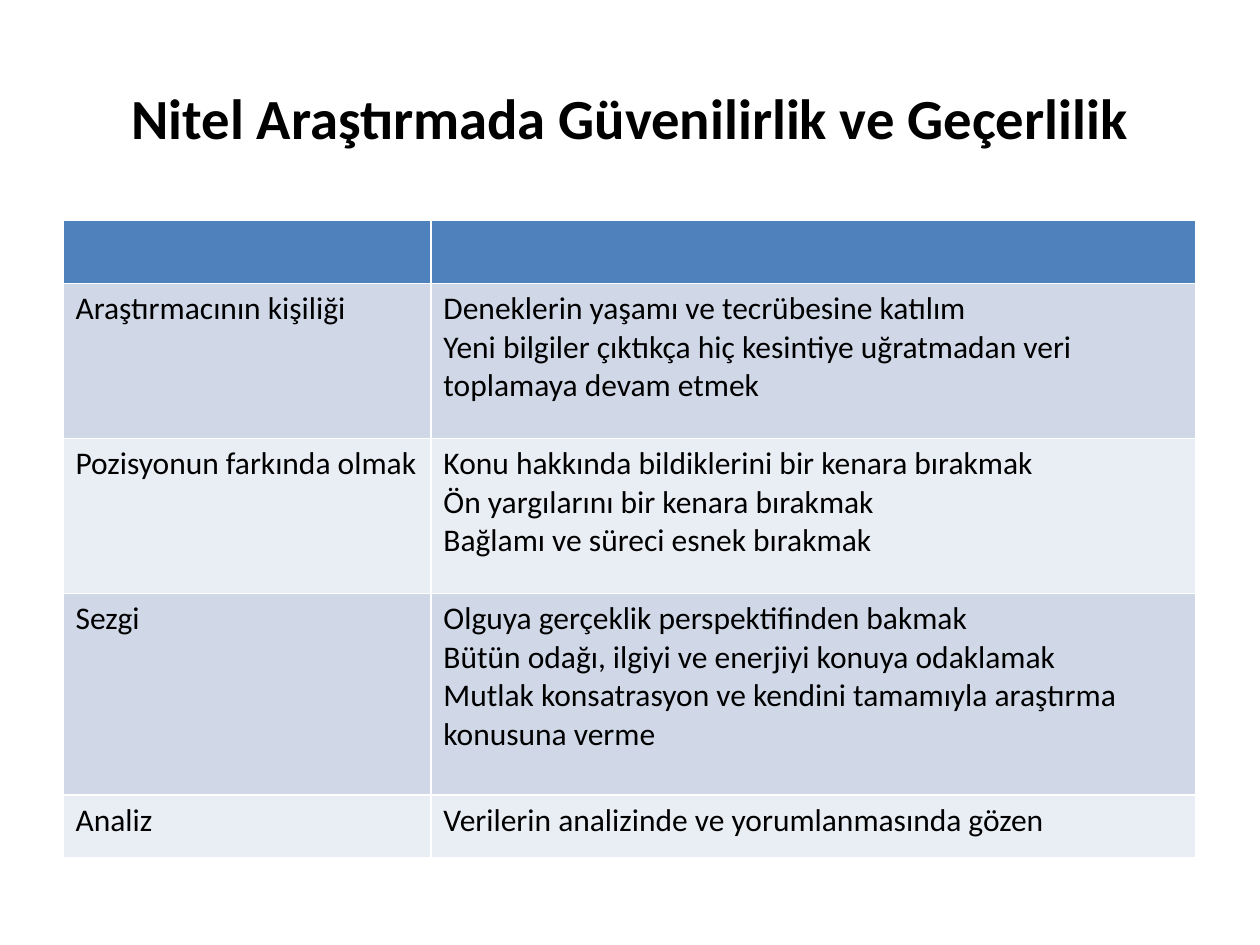
import dataclasses

import pptx
import pptx.dml.color
import pptx.enum.text
import pptx.util

Inches = pptx.util.Inches


@dataclasses.dataclass(frozen=True)
class Theme:
    font: str = "Calibri"
    ink: str = "000000"
    head: str = "4F81BD"
    bands: tuple = ("D0D8E8", "E9EDF4")
    title: float = 32.4
    body: float = 18


THEME = Theme()
TITLE = "Nitel Araştırmada Güvenilirlik ve Geçerlilik"
WIDTHS = (2.92, 6.07)
HEIGHTS = (0.5, 1.23, 1.23, 1.6, 0.5)
ROWS = (
    ("", ""),
    ("Araştırmacının kişiliği",
     "Deneklerin yaşamı ve tecrübesine katılım\n"
     "Yeni bilgiler çıktıkça hiç kesintiye uğratmadan veri toplamaya devam etmek"),
    ("Pozisyonun farkında olmak",
     "Konu hakkında bildiklerini bir kenara bırakmak\n"
     "Ön yargılarını bir kenara bırakmak\n"
     "Bağlamı ve süreci esnek bırakmak"),
    ("Sezgi",
     "Olguya gerçeklik perspektifinden bakmak\n"
     "Bütün odağı, ilgiyi ve enerjiyi konuya odaklamak\n"
     "Mutlak konsatrasyon ve kendini tamamıyla araştırma konusuna verme"),
    ("Analiz", "Verilerin analizinde ve yorumlanmasında gözen"),
)


def color(code):
    return pptx.dml.color.RGBColor.from_string(code)


def write(frame, text, size, bold=False):
    frame.text = text
    for para in frame.paragraphs:
        for run in para.runs:
            run.font.name = THEME.font
            run.font.size = pptx.util.Pt(size)
            run.font.bold = bold
            run.font.color.rgb = color(THEME.ink)


def add_title(slide):
    box = slide.shapes.add_textbox(Inches(0.5), Inches(0.3), Inches(9), Inches(1.25))
    frame = box.text_frame
    frame.word_wrap = True
    frame.vertical_anchor = pptx.enum.text.MSO_ANCHOR.MIDDLE
    write(frame, TITLE, THEME.title, bold=True)
    frame.paragraphs[0].alignment = pptx.enum.text.PP_ALIGN.CENTER


def add_grid(slide):
    table = slide.shapes.add_table(
        len(ROWS), len(WIDTHS), Inches(0.5), Inches(1.75),
        Inches(sum(WIDTHS)), Inches(sum(HEIGHTS))).table
    for col, width in zip(table.columns, WIDTHS):
        col.width = Inches(width)
    for i, (row, height, texts) in enumerate(zip(table.rows, HEIGHTS, ROWS)):
        row.height = Inches(height)
        shade = THEME.bands[(i - 1) % 2] if i else THEME.head
        for cell, text in zip(row.cells, texts):
            cell.fill.solid()
            cell.fill.fore_color.rgb = color(shade)
            write(cell.text_frame, text, THEME.body)


def main():
    deck = pptx.Presentation()
    deck.slide_width = Inches(10)
    deck.slide_height = Inches(7.5)
    slide = deck.slides.add_slide(deck.slide_layouts[6])
    add_title(slide)
    add_grid(slide)
    deck.save("out.pptx")


if __name__ == "__main__":
    main()
